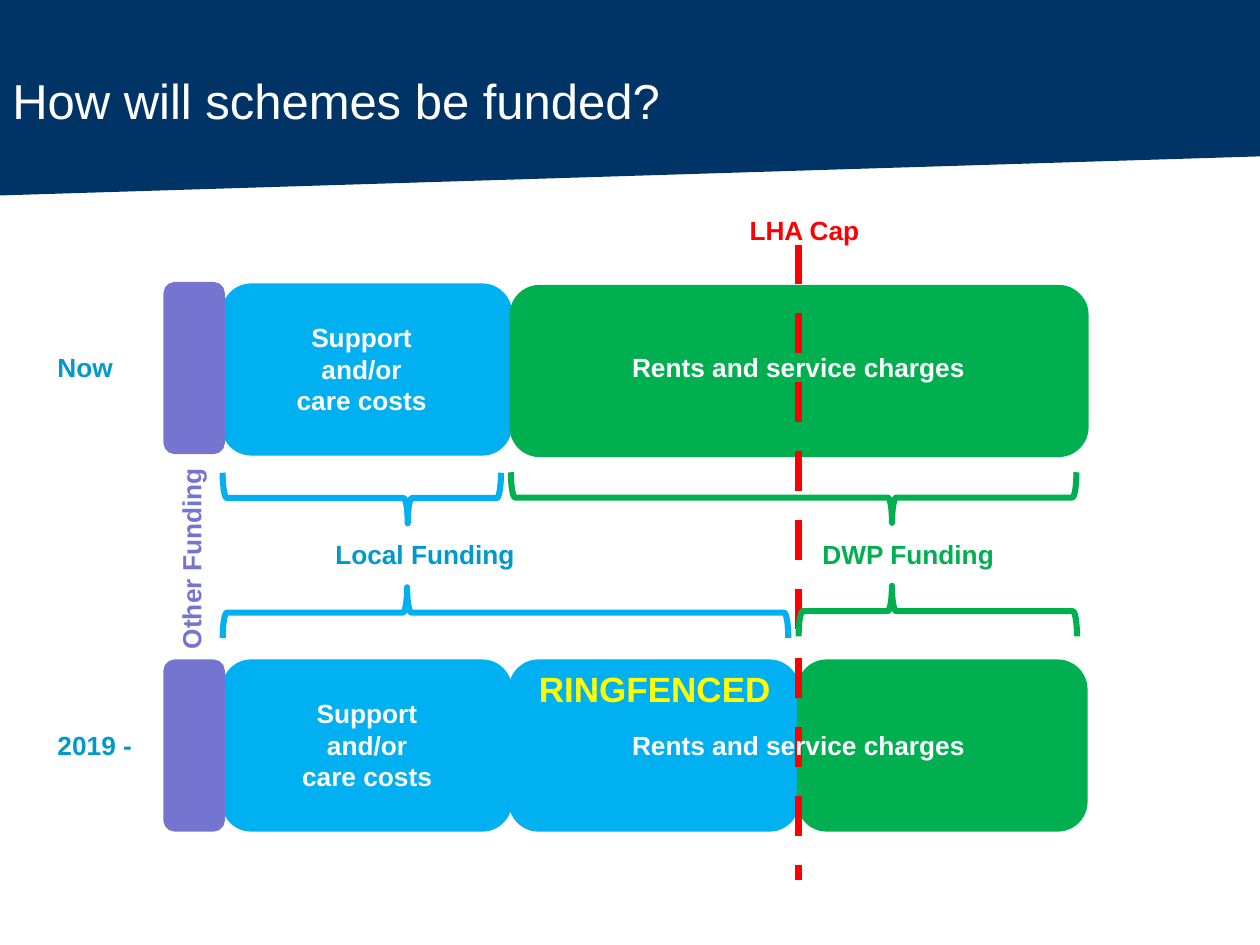
import dataclasses

import lxml.etree
import pptx
import pptx.dml.color
import pptx.enum.shapes
import pptx.enum.text
import pptx.oxml.ns
import pptx.util

Cm = pptx.util.Cm
Pt = pptx.util.Pt
RGBColor = pptx.dml.color.RGBColor
Shape = pptx.enum.shapes.MSO_SHAPE
Align = pptx.enum.text.PP_ALIGN
Anchor = pptx.enum.text.MSO_ANCHOR


@dataclasses.dataclass(frozen=True)
class Theme:
    font: str = "Arial"
    navy: str = "003366"
    white: str = "FFFFFF"
    local: str = "00B0F0"
    local_text: str = "0099CC"
    dwp: str = "00B050"
    other: str = "7575D1"
    cap: str = "FF0000"
    ringfence: str = "FFFF00"
    title_size: int = 28
    accent_size: int = 20
    label_size: int = 15
    label_leading: int = 18


theme = Theme()
presentation = pptx.Presentation()
presentation.slide_width = Cm(25.4)
presentation.slide_height = Cm(19.05)
slide = presentation.slides.add_slide(presentation.slide_layouts[6])


def add_shape(kind, left, top, width, height, fill, line, line_width):
    shape = slide.shapes.add_shape(kind, Cm(left), Cm(top), Cm(width), Cm(height))
    shape.shadow.inherit = False
    if fill:
        shape.fill.solid()
        shape.fill.fore_color.rgb = RGBColor.from_string(fill)
    else:
        shape.fill.background()
    if line:
        shape.line.color.rgb = RGBColor.from_string(line)
        shape.line.width = Pt(line_width)
    else:
        shape.line.fill.background()
    return shape


def add_label(text, left, top, width, height, color, size=theme.label_size,
              align=Align.LEFT, anchor=Anchor.MIDDLE, bold=True):
    label = slide.shapes.add_textbox(Cm(left), Cm(top), Cm(width), Cm(height))
    text_frame = label.text_frame
    text_frame.word_wrap = True
    text_frame.vertical_anchor = anchor
    text_frame.text = text
    for paragraph in text_frame.paragraphs:
        paragraph.alignment = align
        if len(text_frame.paragraphs) > 1:
            paragraph.line_spacing = Pt(theme.label_leading)
        for run in paragraph.runs:
            run.font.name = theme.font
            run.font.size = Pt(size)
            run.font.bold = bold
            run.font.color.rgb = RGBColor.from_string(color)
    return label


header = add_shape(Shape.FLOWCHART_MANUAL_INPUT, 0, 0, 25.4, 3.94, theme.navy, None, 0)
header.rotation = 180
add_label("How will schemes be funded?", 0, 0.53, 21.59, 2.21, theme.white,
          theme.title_size, anchor=Anchor.BOTTOM, bold=False)

bar_height = 3.4
bars = [
    (4.5, 13.33, 5.79, theme.local),
    (10.29, 13.33, 5.79, theme.local),
    (16.1, 13.33, 5.79, theme.dwp),
    (4.5, 5.75, 5.79, theme.local),
    (10.31, 5.78, 11.6, theme.dwp),
    (3.33, 5.72, 1.17, theme.other),
    (3.33, 13.33, 1.17, theme.other),
]
for left, top, width, color in bars:
    bar = add_shape(Shape.ROUNDED_RECTANGLE, left, top, width, bar_height, color, color, 2)
    bar.adjustments[0] = 0.167

cap_line = slide.shapes.add_connector(
    pptx.enum.shapes.MSO_CONNECTOR.STRAIGHT, Cm(16.1), Cm(4.93), Cm(16.1), Cm(17.73))
cap_line.line.color.rgb = RGBColor.from_string(theme.cap)
cap_line.line.width = Pt(4)
qn = pptx.oxml.ns.qn
line_properties = cap_line.line._get_or_add_ln()
custom_dash = lxml.etree.SubElement(line_properties, qn("a:custDash"))
lxml.etree.SubElement(custom_dash, qn("a:ds"), d="570000", sp="415000")
lxml.etree.SubElement(cap_line._element.spPr, qn("a:effectLst"))

brace_depth = 1.02
braces = [
    (10.3, 9.52, 11.4, 270, 0.674, theme.dwp),
    (16.1, 11.81, 5.61, 90, 0.665, theme.dwp),
    (4.49, 9.53, 5.61, 270, 0.665, theme.local),
    (4.49, 11.84, 11.4, 90, 0.674, theme.local),
]
for left, top, length, rotation, tip, color in braces:
    offset = (length - brace_depth) / 2
    brace = add_shape(Shape.LEFT_BRACE, left + offset, top - offset,
                      brace_depth, length, None, color, 3.5)
    brace.rotation = rotation
    brace.adjustments[0] = 0.083
    brace.adjustments[1] = tip

label_height = 0.89
add_label("DWP Funding", 16.33, 10.72, 4.3, label_height, theme.dwp)
add_label("Local Funding", 6.51, 10.72, 4.5, label_height, theme.local_text)
other_label = add_label("Other Funding", 1.6, 10.64, 4.5, label_height, theme.other)
other_label.rotation = 270
add_label("LHA Cap", 14.86, 4.19, 3, label_height, theme.cap)
for left, top in ((5.54, 6.35), (5.65, 13.93)):
    add_label("Support\nand/or\ncare costs", left, top, 3.5, 2.16, theme.white,
              align=Align.CENTER)
add_label("RINGFENCED", 10.4, 13.34, 5.6, 1.09, theme.ringfence,
          theme.accent_size, Align.CENTER)
for period, top in (("Now", 6.96), ("2019 -", 14.58)):
    add_label("Rents and service charges", 11.18, top, 9.83, label_height, theme.white,
              align=Align.CENTER)
    add_label(period, 0.91, top, 2.4, label_height, theme.local_text)

presentation.save("out.pptx")
